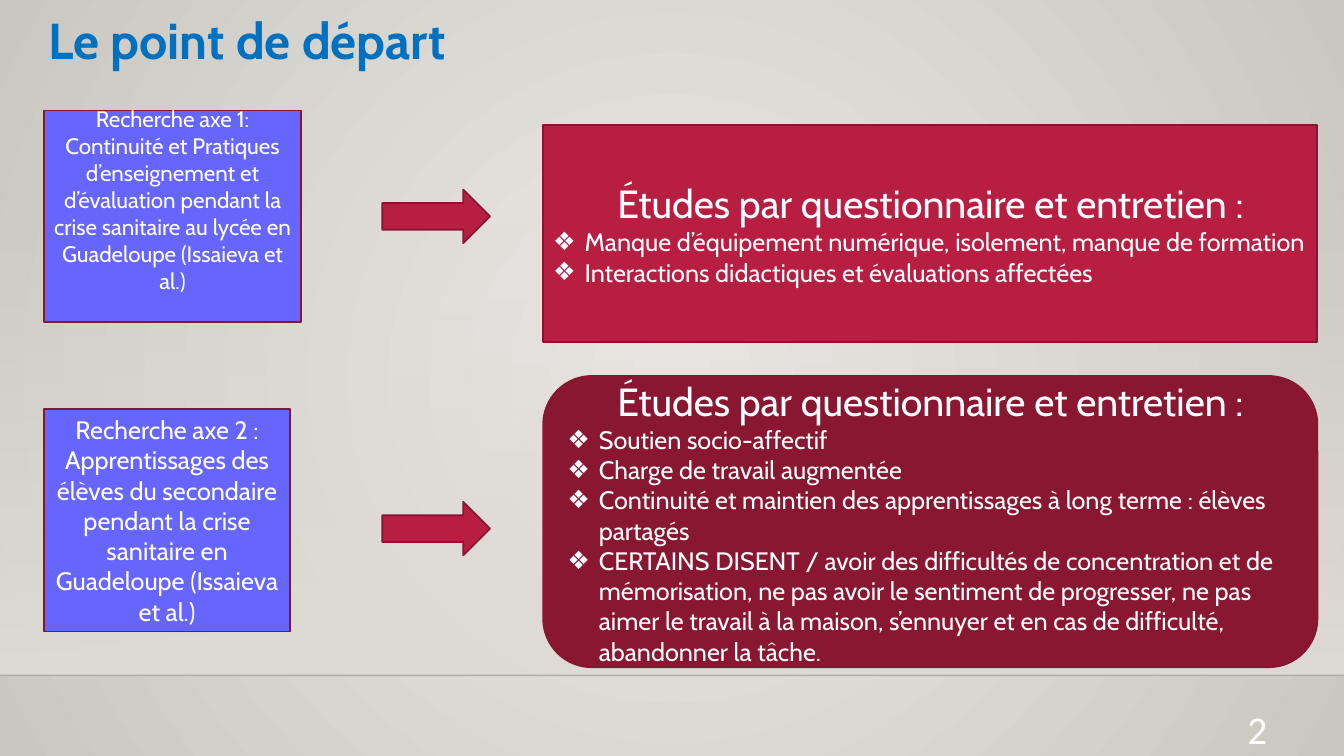
import pptx
import pptx.util
import pptx.dml.color
import pptx.enum.shapes
import pptx.enum.text
import pptx.oxml
import pptx.oxml.ns
import lxml.etree

Pt = pptx.util.Pt
SHAPE = pptx.enum.shapes.MSO_SHAPE
ALIGN = pptx.enum.text.PP_ALIGN
ANCHOR = pptx.enum.text.MSO_ANCHOR
qn = pptx.oxml.ns.qn
WIDTH, HEIGHT = 960, 540
FLOOR = 482.4
FONT = "Cabin"
WHITE, RED, DARK_RED, BORDER, VIOLET = "FFFFFF", "B71E42", "891731", "871631", "6666FF"


def rgb(value):
    return pptx.dml.color.RGBColor.from_string(value)


def add_child(parent, tag, **attrs):
    return lxml.etree.SubElement(parent, qn(tag), attrs)


def set_gradient(fill, start, end):
    fill.gradient()
    for stop, value in zip(fill.gradient_stops, (start, end)):
        stop.color.rgb = rgb(value)


def draw_background(s):
    fill = s.background.fill
    set_gradient(fill, "ECEAE7", "CAC7C1")
    grad = s.background._cSld.find(".//" + qn("a:gradFill"))
    grad.remove(grad.find(qn("a:lin")))
    path = add_child(grad, "a:path", path="circle")
    add_child(path, "a:fillToRect", l="50000", t="50000", r="50000", b="50000")

    veil = s.shapes.add_shape(SHAPE.RECTANGLE, 0, Pt(159), Pt(WIDTH), Pt(FLOOR - 159))
    veil.shadow.inherit = False
    veil.line.fill.background()
    set_gradient(veil.fill, "DFDBD5", "DFDBD5")
    veil.fill.gradient_angle = 270
    add_child(veil._element.spPr.find(".//" + qn("a:srgbClr")), "a:alpha", val="0")

    edge = s.shapes.add_connector(
        pptx.enum.shapes.MSO_CONNECTOR.STRAIGHT, 0, Pt(FLOOR), Pt(WIDTH), Pt(FLOOR))
    edge.line.width = Pt(1)
    edge.line.color.rgb = rgb("000001")
    add_child(edge._element.spPr.find(".//" + qn("a:srgbClr")), "a:alpha", val="20000")
    add_child(edge._element.spPr, "a:effectLst")


def format_text(p, size, color=WHITE, align=ALIGN.CENTER, font=FONT, bold=False):
    p.alignment = align
    for r in p.runs:
        r.font.size = Pt(size)
        r.font.name = font
        r.font.bold = bold
        r.font.color.rgb = rgb(color)


def place_title(s, text, box):
    sp = s.shapes.title
    sp.left, sp.top, sp.width, sp.height = map(Pt, box)
    tf = sp.text_frame
    tf.text = text
    tf.word_wrap = True
    tf.auto_size = pptx.enum.text.MSO_AUTO_SIZE.NONE
    tf.vertical_anchor = ANCHOR.TOP
    format_text(tf.paragraphs[0], 36, "0070C0", ALIGN.LEFT, bold=True)


def add_panel(s, kind, box, fill):
    sp = s.shapes.add_shape(kind, *map(Pt, box))
    sp.shadow.inherit = False
    sp.fill.solid()
    sp.fill.fore_color.rgb = rgb(fill)
    sp.line.color.rgb = rgb(BORDER)
    sp.line.width = Pt(1.25)
    sp.text_frame.word_wrap = True
    sp.text_frame.vertical_anchor = ANCHOR.MIDDLE
    return sp


def add_axis(s, box, lines, size, raised=0):
    tf = add_panel(s, SHAPE.RECTANGLE, box, VIOLET).text_frame
    tf.margin_bottom = Pt(3.6 + raised)
    tf.text = "\n".join(lines)
    for p in tf.paragraphs:
        format_text(p, size)


def add_findings(s, kind, box, fill, findings):
    tf = add_panel(s, kind, box, fill).text_frame
    tf.text = "\n".join(["Études par questionnaire et entretien :"] + findings)
    format_text(tf.paragraphs[0], 28)
    for p in tf.paragraphs[1:]:
        pPr = p._p.get_or_add_pPr()
        pPr.set("marL", str(Pt(22.5)))
        pPr.set("indent", str(-Pt(22.5)))
        add_child(pPr, "a:buFont", typeface="Arial")
        add_child(pPr, "a:buChar", char="❖")
        format_text(p, 18, align=ALIGN.LEFT)


def add_number(s, text, box):
    tf = s.shapes.add_textbox(*map(Pt, box)).text_frame
    tf.word_wrap = True
    tf.text = text
    format_text(tf.paragraphs[0], 28, align=ALIGN.RIGHT, font="Calibri")


def main():
    prs = pptx.Presentation()
    prs.slide_width, prs.slide_height = Pt(WIDTH), Pt(HEIGHT)
    s = prs.slides.add_slide(prs.slide_layouts[5])
    draw_background(s)
    place_title(s, "Le point de départ", (27.4, 2.9, 322, 51))

    add_axis(s, (31.5, 79, 183.6, 151.2), [
        "Recherche axe 1:",
        "Continuité et Pratiques d’enseignement et d’évaluation pendant la crise "
        "sanitaire au lycée en Guadeloupe (Issaieva et al.)",
    ], 16, raised=24)
    add_axis(s, (31.5, 292.2, 175.7, 159), [
        "Recherche axe 2 :",
        "Apprentissages des élèves du secondaire pendant la crise sanitaire en "
        "Guadeloupe (Issaieva et al.)",
    ], 18)

    for top in (135.5, 358.5):
        add_panel(s, SHAPE.RIGHT_ARROW, (273, top, 77, 38.2), RED)

    add_findings(s, SHAPE.RECTANGLE, (388, 89.3, 553, 155), RED, [
        "Manque d’équipement numérique, isolement, manque de formation",
        "Interactions didactiques et évaluations affectées",
    ])
    add_findings(s, SHAPE.ROUNDED_RECTANGLE, (388, 268.6, 553, 208), DARK_RED, [
        "Soutien socio-affectif",
        "Charge de travail augmentée",
        "Continuité et maintien des apprentissages à long terme : élèves partagés",
        "CERTAINS DISENT / avoir des difficultés de concentration et de mémorisation, "
        "ne pas avoir le sentiment de progresser, ne pas aimer le travail à la maison, "
        "s’ennuyer et en cas de difficulté, abandonner la tâche.",
    ])
    add_number(s, "2", (688.3, 500.4, 224, 28.8))
    prs.save("out.pptx")


if __name__ == "__main__":
    main()
